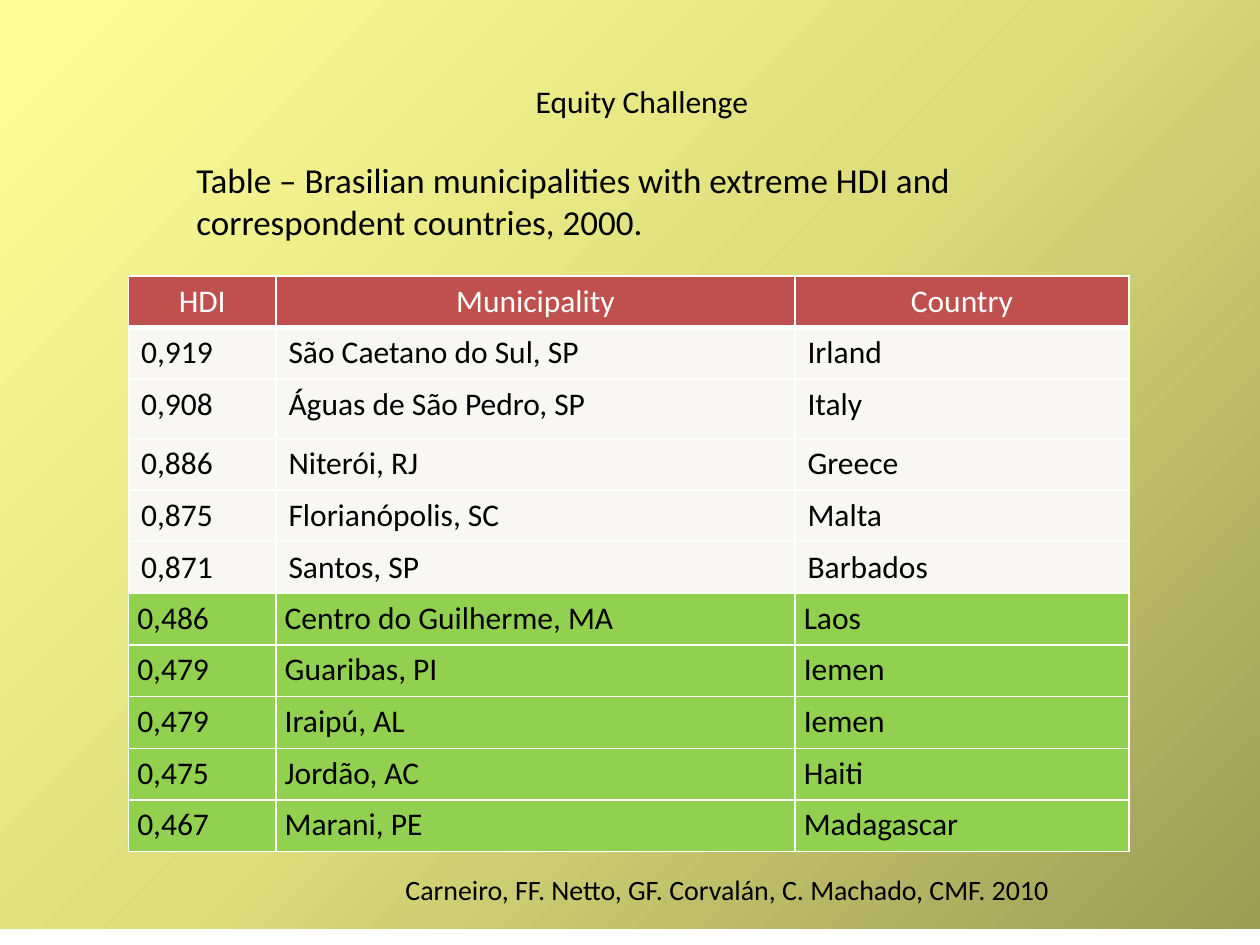
"""Build the Equity Challenge slide comparing municipal and national HDI values."""
import copy

import pptx
import pptx.dml.color
import pptx.enum.shapes
import pptx.enum.text
import pptx.oxml.ns
import pptx.util
from pptx.util import Inches

BLACK = pptx.dml.color.RGBColor(0x00, 0x00, 0x00)
WHITE = pptx.dml.color.RGBColor(0xFF, 0xFF, 0xFF)
RED = pptx.dml.color.RGBColor(0xC0, 0x50, 0x4D)
OFF_WHITE = pptx.dml.color.RGBColor(0xF8, 0xF7, 0xF3)
GREEN = pptx.dml.color.RGBColor(0x92, 0xD0, 0x50)
OLIVE = pptx.dml.color.RGBColor(0x9C, 0x9C, 0x56)
MID_YELLOW = pptx.dml.color.RGBColor(0xDD, 0xDD, 0x7B)
LIGHT_YELLOW = pptx.dml.color.RGBColor(0xFF, 0xFF, 0x99)

HEADER = ("HDI", "Municipality", "Country")
HIGHEST = [
    ("0,919", "São Caetano do Sul, SP", "Irland"),
    ("0,908", "Águas de São Pedro, SP", "Italy"),
    ("0,886", "Niterói, RJ", "Greece"),
    ("0,875", "Florianópolis, SC", "Malta"),
    ("0,871", "Santos, SP", "Barbados"),
]
LOWEST = [
    ("0,486", "Centro do Guilherme, MA", "Laos"),
    ("0,479", "Guaribas, PI", "Iemen"),
    ("0,479", "Iraipú, AL", "Iemen"),
    ("0,475", "Jordão, AC", "Haiti"),
    ("0,467", "Marani, PE", "Madagascar"),
]


def write_text(text_frame, text, size, color=BLACK):
    text_frame.word_wrap = True
    text_frame.text = text
    paragraph = text_frame.paragraphs[0]
    font = paragraph.runs[0].font
    font.name = "Calibri"
    font.size = pptx.util.Pt(size)
    font.bold = False
    font.color.rgb = color
    return paragraph


def add_borders(cell, bottom_width):
    properties = cell._tc.get_or_add_tcPr()
    for side, width in (("L", 1), ("R", 1), ("T", 1), ("B", bottom_width)):
        properties.append(pptx.oxml.parse_xml(
            f'<a:ln{side} {pptx.oxml.ns.nsdecls("a")} w="{pptx.util.Pt(width)}">'
            f'<a:solidFill><a:srgbClr val="{WHITE}"/></a:solidFill></a:ln{side}>'
        ))


presentation = pptx.Presentation()
presentation.slide_width = Inches(10)
presentation.slide_height = Inches(7.5)
slide = presentation.slides.add_slide(presentation.slide_layouts[5])

backdrop = slide.shapes.add_shape(
    pptx.enum.shapes.MSO_SHAPE.RECTANGLE, 0, 0, Inches(10), Inches(7.37)
)
backdrop.shadow.inherit = False
backdrop.line.fill.background()
backdrop.fill.gradient()
backdrop.fill.gradient_angle = 135
stop_list = backdrop._element.spPr.find(".//" + pptx.oxml.ns.qn("a:gsLst"))
stop_list.append(copy.deepcopy(stop_list[-1]))
gradient = zip(backdrop.fill.gradient_stops, (0, 0.5, 1), (OLIVE, MID_YELLOW, LIGHT_YELLOW))
for stop, position, color in gradient:
    stop.position = position
    stop.color.rgb = color
slide.shapes._spTree.insert(2, backdrop._element)

title = slide.shapes.title
title.left, title.top, title.width, title.height = map(Inches, (1.46, 0.6, 7.27, 0.4))
title.text_frame.vertical_anchor = pptx.enum.text.MSO_ANCHOR.TOP
title_paragraph = write_text(title.text_frame, "Equity Challenge", 18)
title_paragraph.alignment = pptx.enum.text.PP_ALIGN.CENTER

caption = slide.shapes.add_textbox(Inches(1.46), Inches(1.21), Inches(7.27), Inches(0.78))
write_text(
    caption.text_frame,
    "Table – Brasilian municipalities with extreme HDI and correspondent countries, 2000.",
    20,
)

rows = [HEADER] + HIGHEST + LOWEST
table = slide.shapes.add_table(
    len(rows), len(HEADER), Inches(1.02), Inches(2.19), Inches(7.94), Inches(4.53)
).table
for column, width in zip(table.columns, (1.17, 4.12, 2.65)):
    column.width = Inches(width)

for row_index, values in enumerate(rows):
    is_header = row_index == 0
    is_lowest = row_index > len(HIGHEST)
    fill_color = RED if is_header else GREEN if is_lowest else OFF_WHITE
    table.rows[row_index].height = Inches(0.47 if row_index == 2 else 0.41)
    for column_index, value in enumerate(values):
        cell = table.cell(row_index, column_index)
        paragraph = write_text(cell.text_frame, value, 18, WHITE if is_header else BLACK)
        if is_header:
            paragraph.alignment = pptx.enum.text.PP_ALIGN.CENTER
        if is_lowest:
            cell.margin_left = cell.margin_right = Inches(0.07)
            cell.margin_top = cell.margin_bottom = 0
            paragraph.alignment = pptx.enum.text.PP_ALIGN.JUSTIFY
            paragraph.line_spacing = 1.15
            paragraph.space_after = pptx.util.Pt(10)
        add_borders(cell, 3 if is_header else 1)
        cell.fill.solid()
        cell.fill.fore_color.rgb = fill_color

citation = slide.shapes.add_textbox(Inches(3.12), Inches(6.88), Inches(5.86), Inches(0.37))
write_text(citation.text_frame, "Carneiro, FF. Netto, GF. Corvalán, C. Machado, CMF. 2010", 16)

presentation.save("out.pptx")
